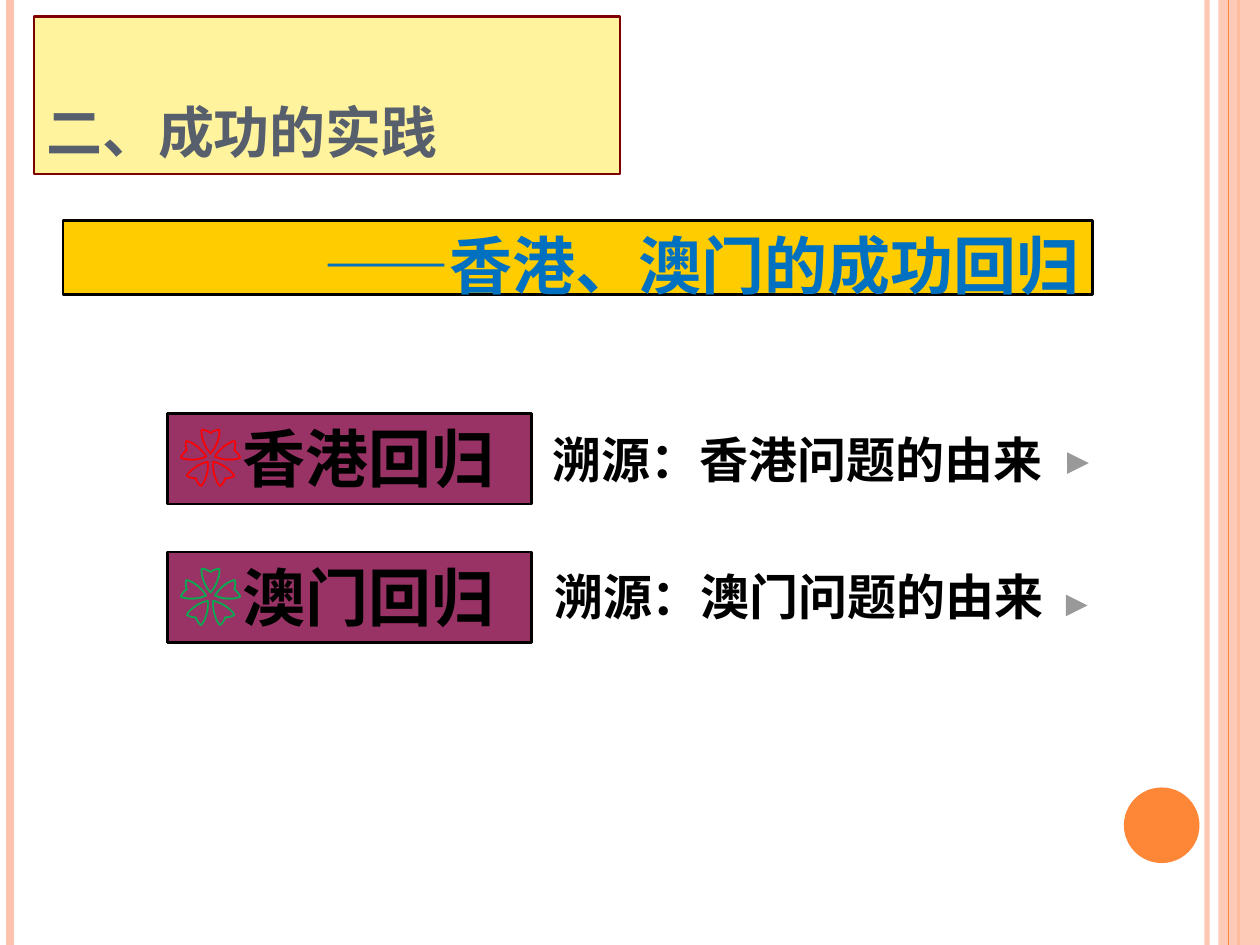
from pptx import Presentation, util as u
from pptx.dml.color import RGBColor
from pptx.enum import shapes, text
from pptx.oxml.ns import qn
from lxml import etree

Inches, Pt = u.Inches, u.Pt
SHAPE = shapes.MSO_SHAPE


def paint(color, value, opacity=100):
    """Set a fill's or font's colour, with optional opacity in percent."""
    if hasattr(color, "solid"):
        color.solid()
    target = color.fore_color if hasattr(color, "fore_color") else color.color
    target.rgb = RGBColor.from_string(value)
    if opacity < 100:
        node = color._xPr.find(".//" + qn("a:srgbClr"))
        etree.SubElement(node, qn("a:alpha")).set("val", str(opacity * 1000))


def add_box(kind, left, top, width, height, fill, opacity=100, outline=None):
    box = page.shapes.add_shape(kind, Inches(left), Inches(top), Inches(width), Inches(height))
    box.shadow.inherit = False
    paint(box.fill, fill, opacity)
    if outline:
        paint(box.line.fill, outline)
        box.line.width = Pt(1.5)
    else:
        box.line.fill.background()
    frame = box.text_frame
    frame.word_wrap = True
    frame.vertical_anchor = text.MSO_ANCHOR.TOP
    frame.paragraphs[0].alignment = text.PP_ALIGN.LEFT
    return box


deck = Presentation()
deck.slide_width, deck.slide_height = Inches(10), Inches(7.5)
page = deck.slides.add_slide(deck.slide_layouts[6])

# Side stripes, with the band lying between the last two lines
stripes = [
    (9.58, "FEC3AE", 3, 93),
    (0.08, "FEC3AE", 4.5, 100),
    (9.83, "FE8637", 1.5, 100),
    (9.75, "FE8637", 0.75, 100),
]
for x, color, width, opacity in stripes:
    if x == 9.75:
        add_box(SHAPE.RECTANGLE, 9.67, 0, 0.33, 7.5, "FEC3AE", 87)
    stripe = page.shapes.add_connector(
        shapes.MSO_CONNECTOR.STRAIGHT, Inches(x), 0, Inches(x), deck.slide_height)
    paint(stripe.line.fill, color, opacity)
    stripe.line.width = Pt(width)
    etree.SubElement(stripe._element.spPr, qn("a:effectLst"))

# Corner circle
add_box(SHAPE.OVAL, 8.92, 6.25, 0.6, 0.6, "FE8637")

# Title in small capitals
title = add_box(SHAPE.RECTANGLE, 0.27, 0.13, 4.65, 1.25, "FFF39D", outline="800000")
title.text_frame.vertical_anchor = text.MSO_ANCHOR.BOTTOM
span = title.text_frame.paragraphs[0].add_run()
span.text = "二、成功的实践"
span.font.name, span.font.size, span.font.bold = "Cambria", Pt(40), True
paint(span.font.fill, "575F6D")
span.font._element.set("cap", "small")

# Subtitle bar
subtitle = add_box(SHAPE.RECTANGLE, 0.5, 1.75, 8.17, 0.59, "FFCC00", outline="000000")
para = subtitle.text_frame.paragraphs[0]
para.text = "——香港、澳门的成功回归"
para.alignment = text.PP_ALIGN.RIGHT
para.space_before = Pt(6)
para.font.name, para.font.size, para.font.bold = "Arial", Pt(36), True
paint(para.runs[0].font.fill, "0070C0")

# One row per city: label, origin text, forward button
rows = [
    ("香港", "FF0000", 3.28, (4.29, 3.36, 4.22), (8.44, 3.52, 0.23, 0.31)),
    ("澳门", "00B050", 4.38, (4.3, 4.45, 4.14), (8.39, 4.69, 0.31, 0.23)),
]
for city, flower_color, top, (left, origin_top, width), button in rows:
    label = add_box(SHAPE.RECTANGLE, 1.33, top, 2.89, 0.72, "993366", outline="000000")
    para = label.text_frame.paragraphs[0]
    para.font.name, para.font.size = "Arial", Pt(36)
    for words, color, bold in [("❀", flower_color, False), (city + "回归", "000000", True)]:
        span = para.add_run()
        span.text = words
        span.font.name, span.font.size, span.font.bold = "Arial", Pt(36), bold
        paint(span.font.fill, color)

    origin = page.shapes.add_textbox(Inches(left), Inches(origin_top), Inches(width), Inches(0.57))
    origin.text_frame.word_wrap = True
    para = origin.text_frame.paragraphs[0]
    para.text = f"溯源：{city}问题的由来"
    para.font.name, para.font.size, para.font.bold = "Noto Sans CJK SC", Pt(28), True
    paint(para.font.fill, "000000")

    add_box(SHAPE.ACTION_BUTTON_FORWARD_OR_NEXT, *button, "FFFFFF")

deck.save("out.pptx")
